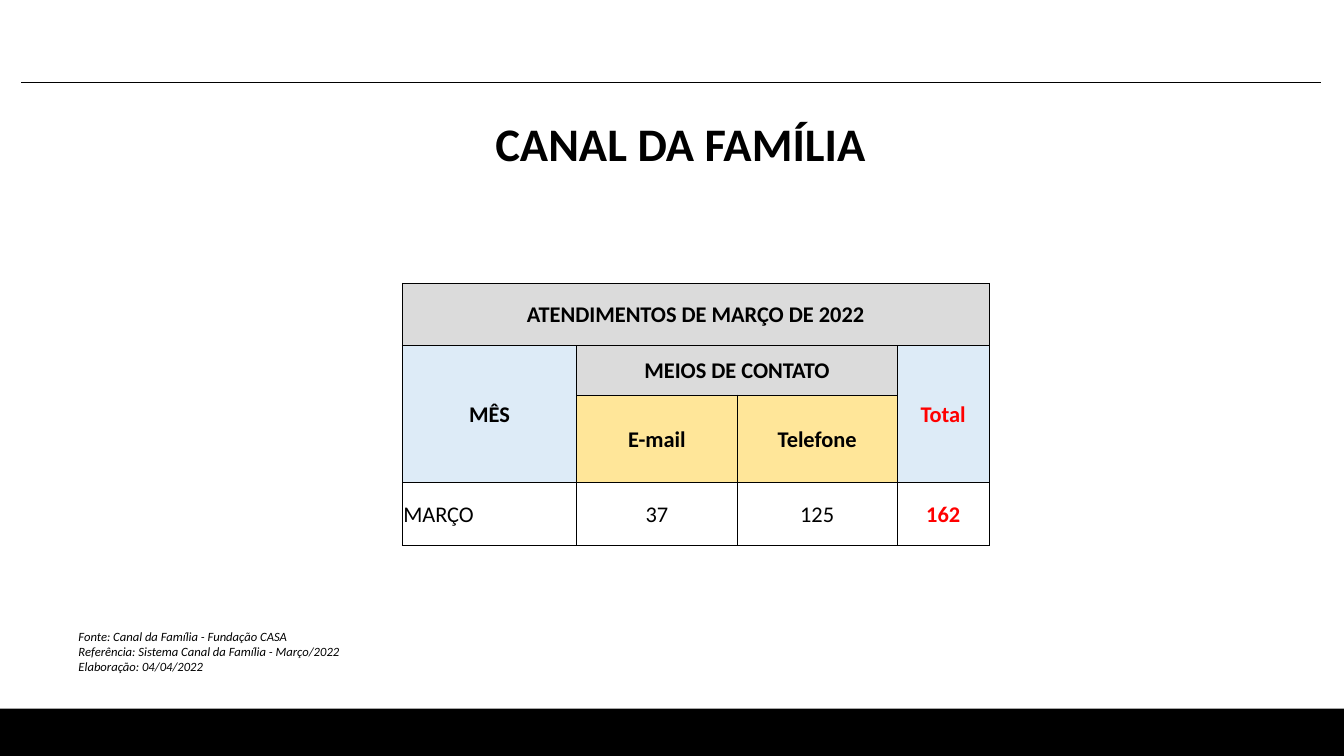
from lxml.etree import SubElement
from pptx import Presentation
from pptx.dml.color import RGBColor
from pptx.enum.shapes import MSO_CONNECTOR as Connector, MSO_SHAPE as Shape
from pptx.enum.text import MSO_ANCHOR as Anchor, PP_ALIGN as Align
from pptx.oxml.ns import qn
from pptx.util import Inches, Pt

BLACK, RED = "000000", "FF0000"
GRAY, BLUE, YELLOW = "DBDBDB", "DDEBF7", "FFE699"
COLUMN_WIDTHS = [1.73, 1.59, 1.59, 0.91]
ROW_HEIGHTS = [0.62, 0.49, 0.87, 0.62]
CELLS = [
    (0, 0, "ATENDIMENTOS DE MARÇO DE 2022", {"fill": GRAY, "span": (1, 4)}),
    (1, 0, "MÊS", {"fill": BLUE, "span": (2, 1)}),
    (1, 1, "MEIOS DE CONTATO", {"fill": GRAY, "span": (1, 2)}),
    (1, 3, "Total", {"fill": BLUE, "span": (2, 1), "color": RED}),
    (2, 1, "E-mail", {"fill": YELLOW}),
    (2, 2, "Telefone", {"fill": YELLOW}),
    (3, 0, "MARÇO", {"bold": False, "align": Align.LEFT}),
    (3, 1, "37", {"bold": False}),
    (3, 2, "125", {"bold": False}),
    (3, 3, "162", {"color": RED}),
]


def rgb(color):
    return RGBColor.from_string(color)


def write_text(frame, text, size, color=BLACK, bold=False, italic=False, align=Align.LEFT):
    for index, line in enumerate(text.split("\n")):
        paragraph = frame.paragraphs[0] if index == 0 else frame.add_paragraph()
        paragraph.alignment = align
        run = paragraph.add_run()
        run.text = line
        font = run.font
        font.name, font.size = "Calibri", Pt(size)
        font.bold, font.italic = bold, italic
        font.color.rgb = rgb(color)


def add_text(slide, left, top, width, height, text, **text_format):
    box = slide.shapes.add_textbox(Inches(left), Inches(top), Inches(width), Inches(height))
    box.text_frame.word_wrap = True
    write_text(box.text_frame, text, **text_format)


def add_bar(slide, left, top, width, height, color):
    bar = slide.shapes.add_shape(
        Shape.RECTANGLE, Inches(left), Inches(top), Inches(width), Inches(height))
    bar.shadow.inherit = False
    bar.fill.solid()
    bar.fill.fore_color.rgb = rgb(color)
    bar.line.fill.background()


def add_rule(slide, left, right, top, color):
    rule = slide.shapes.add_connector(
        Connector.STRAIGHT, Inches(left), Inches(top), Inches(right), Inches(top))
    rule.line.color.rgb = rgb(color)
    rule.line.width = Pt(0.75)
    SubElement(rule._element.spPr, qn("a:effectLst"))


def add_borders(cell, color, width):
    properties = cell._tc.get_or_add_tcPr()
    for index, side in enumerate(("a:lnL", "a:lnR", "a:lnT", "a:lnB")):
        border = properties.makeelement(qn(side), {"w": str(Pt(width))})
        fill = SubElement(border, qn("a:solidFill"))
        SubElement(fill, qn("a:srgbClr"), {"val": color})
        properties.insert(index, border)


def fill_cell(table, row, column, text, fill=None, span=(1, 1), bold=True,
              color=BLACK, align=Align.CENTER):
    cell = table.cell(row, column)
    if span != (1, 1):
        cell.merge(table.cell(row + span[0] - 1, column + span[1] - 1))
    if fill:
        cell.fill.solid()
        cell.fill.fore_color.rgb = rgb(fill)
    write_text(cell.text_frame, text, size=16, color=color, bold=bold, align=align)


def add_contact_table(slide, left, top):
    table = slide.shapes.add_table(
        len(ROW_HEIGHTS), len(COLUMN_WIDTHS), Inches(left), Inches(top),
        Inches(sum(COLUMN_WIDTHS)), Inches(sum(ROW_HEIGHTS))).table
    table.first_row = table.horz_banding = False
    for column, width in zip(table.columns, COLUMN_WIDTHS):
        column.width = Inches(width)
    for row, height in zip(table.rows, ROW_HEIGHTS):
        row.height = Inches(height)
    for cell in table.iter_cells():
        cell.margin_left = cell.margin_right = cell.margin_top = Inches(0.01)
        cell.margin_bottom = 0
        cell.vertical_anchor = Anchor.MIDDLE
        cell.fill.background()
        add_borders(cell, BLACK, 0.5)
    for row, column, text, cell_format in CELLS:
        fill_cell(table, row, column, text, **cell_format)


def main():
    presentation = Presentation()
    presentation.slide_width, presentation.slide_height = Inches(13.33), Inches(7.5)
    slide = presentation.slides.add_slide(presentation.slide_layouts[6])
    add_bar(slide, 0, 7.03, 13.33, 0.47, BLACK)
    add_rule(slide, 0.21, 13.1, 0.82, BLACK)
    add_text(slide, 3.52, 1.09, 6.46, 0.63, "CANAL DA FAMÍLIA",
             size=33.3, bold=True, align=Align.CENTER)
    add_text(slide, 0.68, 6.19, 3.31, 0.56,
             "Fonte: Canal da Família - Fundação CASA\n"
             "Referência: Sistema Canal da Família - Março/2022\n"
             "Elaboração: 04/04/2022", size=9, italic=True)
    add_contact_table(slide, 3.99, 2.81)
    presentation.save("out.pptx")


if __name__ == "__main__":
    main()
